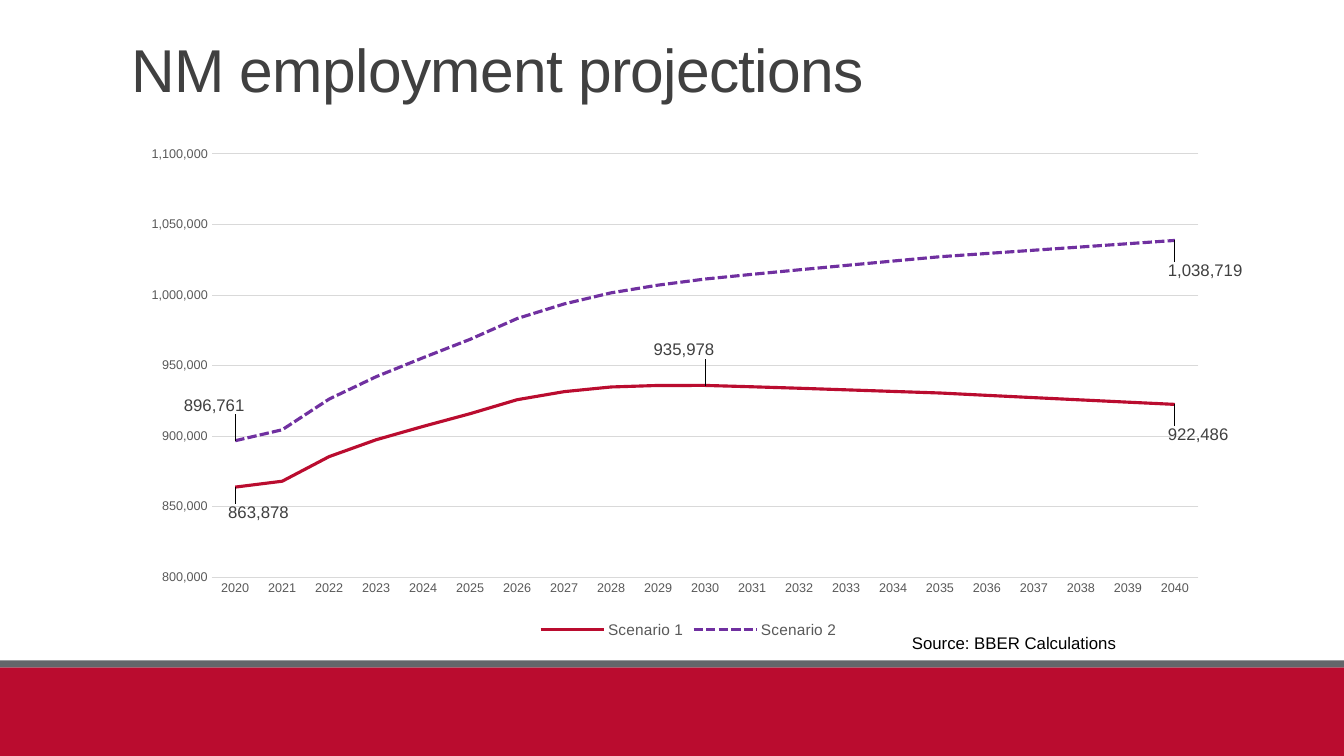
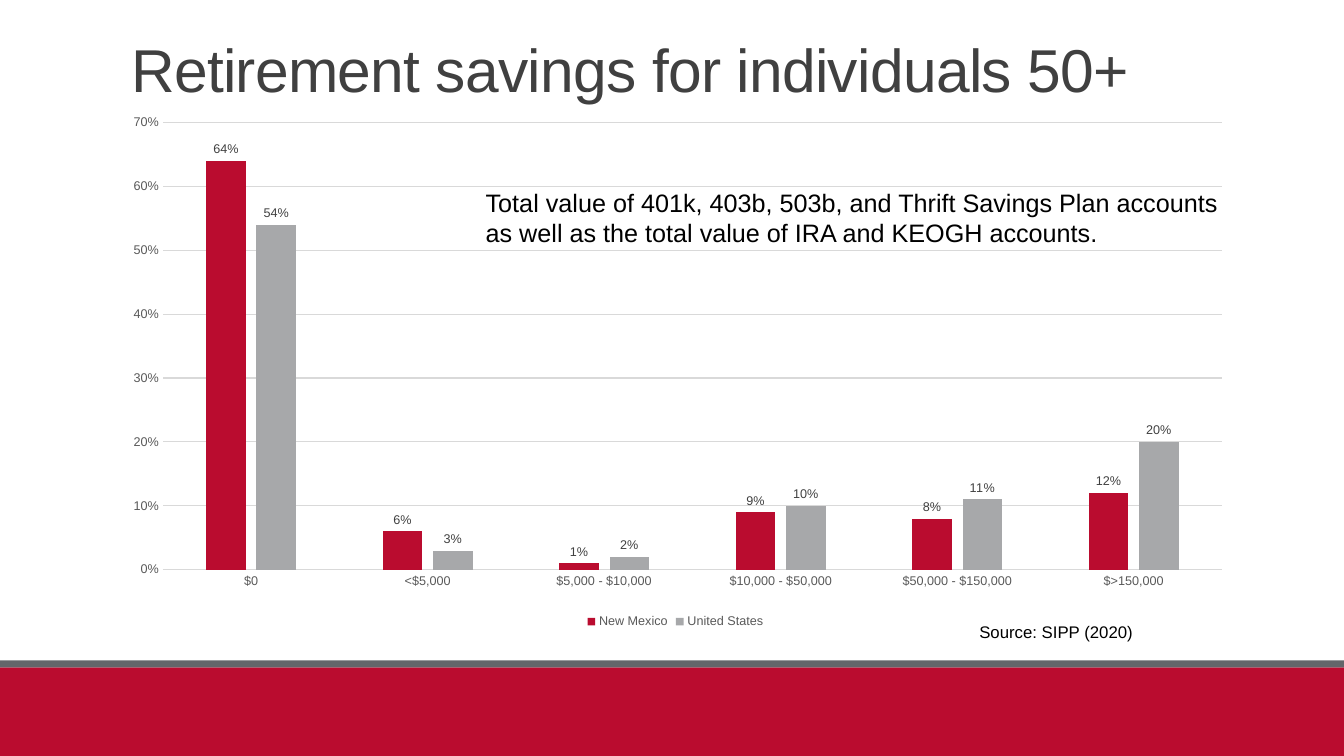
from dataclasses import dataclass
from typing import Any

import lxml.etree as etree
import pptx
import pptx.chart.data
import pptx.dml.color
import pptx.enum.chart
import pptx.enum.dml
import pptx.enum.shapes
import pptx.enum.text
import pptx.oxml
import pptx.oxml.ns
import pptx.util

Cm = pptx.util.Cm
Pt = pptx.util.Pt
qn = pptx.oxml.ns.qn
Kind = pptx.enum.chart.XL_CHART_TYPE
Fit = pptx.enum.text.MSO_AUTO_SIZE
C15 = "http://schemas.microsoft.com/office/drawing/2012/chart"
LEADERS = (
    f'<c:extLst {pptx.oxml.ns.nsdecls("c")}>'
    '<c:ext uri="{CE6537A1-D6FC-4f65-9D91-7224C49458BB}" '
    f'xmlns:c15="{C15}"><c15:showLeaderLines val="1"/></c:ext></c:extLst>'
)


@dataclass(frozen=True)
class Theme:
    font: str = "Arial"
    red: str = "BA0C2F"
    slate: str = "63666A"
    purple: str = "7030A0"
    silver: str = "A7A8AA"
    black: str = "000000"
    dark: str = "404040"
    gray: str = "595959"
    grid: str = "D9D9D9"
    title: float = 43.2
    note: float = 18
    source: float = 12
    label: float = 12
    legend: float = 11
    small: float = 9


THEME = Theme()


@dataclass(frozen=True)
class Box:
    """A place on the slide, in centimetres."""
    left: float
    top: float
    width: float
    height: float

    def size(self) -> tuple:
        return Cm(self.left), Cm(self.top), Cm(self.width), Cm(self.height)


@dataclass(frozen=True)
class Band:
    box: Box
    color: str


@dataclass(frozen=True)
class Note:
    text: str
    box: Box
    size: float


@dataclass(frozen=True)
class Tag:
    """A point label, moved by fractions of the chart's size."""
    point: int
    x: float
    y: float


@dataclass(frozen=True)
class Series:
    name: str
    color: str
    values: tuple
    tags: tuple = ()
    dashed: bool = False


@dataclass(frozen=True)
class Graph:
    kind: Any
    box: Box
    plot: tuple
    cats: tuple
    series: tuple
    format: str
    legend: float


@dataclass(frozen=True)
class Page:
    title: str
    graph: Graph
    notes: tuple


BANDS = (
    Band(Box(0, 16.82, 33.87, 2.23), THEME.red),
    Band(Box(0, 16.64, 33.87, 0.18), THEME.slate),
)
TITLE = Box(3.05, 1.7, 27.94, 1.07)

JOBS = Graph(
    Kind.LINE, Box(3.38, 3.5, 27.94, 12.7), (0.07, 0.03, 0.89, 0.84),
    tuple(str(year) for year in range(2020, 2041)),
    (
        Series("Scenario 1", THEME.red, (
            863878, 868059, 885517, 897444, 906923, 915925, 925807,
            931521, 934876, 935939, 935978, 935008, 933965, 932848,
            931705, 930557, 928916, 927286, 925670, 924070, 922486),
            (Tag(0, -0.01, 0.05), Tag(10, -0.05, -0.07),
             Tag(20, -0.01, 0.06))),
        Series("Scenario 2", THEME.purple, (
            896761, 904524, 926290, 942158, 955622, 968636, 983356,
            993716, 1001593, 1007028, 1011359, 1014672, 1017893, 1021020,
            1024107, 1027174, 1029477, 1031781, 1034089, 1036401, 1038719),
            (Tag(0, -0.05, -0.07), Tag(20, -0.01, 0.06)), True),
    ),
    "#,##0", THEME.legend,
)
SAVINGS = Graph(
    Kind.COLUMN_CLUSTERED, Box(2.67, 2.69, 28.7, 13.26),
    (0.05, 0.03, 0.93, 0.85),
    ("$0", "<$5,000", "$5,000 - $10,000", "$10,000 - $50,000",
     "$50,000 - $150,000", "$>150,000"),
    (
        Series("New Mexico", THEME.red, (0.64, 0.06, 0.01, 0.09, 0.08, 0.12)),
        Series("United States", THEME.silver,
               (0.54, 0.03, 0.02, 0.1, 0.11, 0.2)),
    ),
    "0%", THEME.small,
)
PAGES = (
    Page("NM employment projections", JOBS, (
        Note("Source: BBER Calculations", Box(22.73, 15.82, 11.13, 0.77),
             THEME.source),
    )),
    Page("Retirement savings for individuals 50+", SAVINGS, (
        Note("Source: SIPP (2020)", Box(24.43, 15.54, 8.69, 0.77),
             THEME.source),
        Note("Total value of 401k, 403b, 503b, and Thrift Savings Plan "
             "accounts as well as the total value of IRA and KEOGH accounts.",
             Box(11.99, 4.6, 19.15, 1.8), THEME.note),
    )),
)


def rgb(code: str) -> pptx.dml.color.RGBColor:
    return pptx.dml.color.RGBColor.from_string(code)


def style(font: Any, size: float, color: str) -> None:
    font.name = THEME.font
    font.size = Pt(size)
    font.bold = False
    font.color.rgb = rgb(color)


def place(shape: Any, box: Box) -> None:
    shape.left, shape.top, shape.width, shape.height = box.size()


def add_band(master: Any, slide: Any, band: Band, order: int) -> None:
    """Draw a band and move it to the master, behind the placeholders."""
    shape = slide.shapes.add_shape(
        pptx.enum.shapes.MSO_SHAPE.RECTANGLE, *band.box.size())
    shape.shadow.inherit = False
    shape.fill.solid()
    shape.fill.fore_color.rgb = rgb(band.color)
    shape.line.fill.background()
    master.shapes.element.insert(2 + order, shape.element)


def set_title(slide: Any, text: str) -> None:
    title = slide.shapes.title
    frame = title.text_frame
    frame.text = text
    frame.auto_size = Fit.NONE
    para = frame.paragraphs[0]
    para.alignment = pptx.enum.text.PP_ALIGN.LEFT
    para.line_spacing = 0.85
    style(para.runs[0].font, THEME.title, THEME.dark)
    title.element.xpath(".//a:rPr")[0].set("spc", "-50")


def add_note(slide: Any, note: Note) -> None:
    frame = slide.shapes.add_textbox(*note.box.size()).text_frame
    frame.word_wrap = True
    frame.auto_size = Fit.SHAPE_TO_FIT_TEXT
    frame.text = note.text
    style(frame.paragraphs[0].runs[0].font, note.size, THEME.black)


def layout(modes: dict) -> Any:
    """Build a manual chart layout from its settings."""
    root = etree.Element(qn("c:layout"))
    manual = etree.SubElement(root, qn("c:manualLayout"))
    for name, value in modes.items():
        etree.SubElement(manual, qn(f"c:{name}")).set("val", str(value))
    return root


def set_plot(chart: Any, plot: tuple) -> None:
    area = chart.element.xpath(".//c:plotArea")[0]
    for old in area.findall(qn("c:layout")):
        area.remove(old)
    x, y, w, h = plot
    area.insert(0, layout(dict(
        layoutTarget="inner", xMode="edge", yMode="edge", x=x, y=y, w=w, h=h)))


def style_axes(chart: Any, code: str) -> None:
    for axis in (chart.category_axis, chart.value_axis):
        axis.major_tick_mark = pptx.enum.chart.XL_TICK_MARK.NONE
        axis.minor_tick_mark = pptx.enum.chart.XL_TICK_MARK.NONE
        style(axis.tick_labels.font, THEME.small, THEME.gray)
    scale = chart.value_axis
    scale.format.line.fill.background()
    scale.has_major_gridlines = True
    scale.tick_labels.number_format = code
    scale.tick_labels.number_format_is_linked = False
    for line in (chart.category_axis.format.line,
                 scale.major_gridlines.format.line):
        line.color.rgb = rgb(THEME.grid)
        line.width = Pt(0.75)


def draw_line(chart: Any, plot: Any, order: int, series: Series) -> None:
    item = plot.series[order]
    item.smooth = False
    line = item.format.line
    line.color.rgb = rgb(series.color)
    line.width = Pt(2.25)
    if series.dashed:
        line.dash_style = pptx.enum.dml.MSO_LINE.SQUARE_DOT
    item.data_labels.show_value = False
    for tag in series.tags:
        label = item.points[tag.point].data_label
        style(label.font, THEME.label, THEME.dark)
        label.position = pptx.enum.chart.XL_LABEL_POSITION.RIGHT
    labels = chart.element.xpath(".//c:ser/c:dLbls")[order]
    for tag, node in zip(series.tags, labels.findall(qn("c:dLbl"))):
        node.insert(1, layout(dict(x=tag.x, y=tag.y)))
    labels.append(pptx.oxml.parse_xml(LEADERS))


def draw_bars(plot: Any, order: int, series: Series, code: str) -> None:
    item = plot.series[order]
    item.format.fill.solid()
    item.format.fill.fore_color.rgb = rgb(series.color)
    labels = item.data_labels
    labels.show_value = True
    labels.number_format = code
    labels.number_format_is_linked = False
    labels.position = pptx.enum.chart.XL_LABEL_POSITION.OUTSIDE_END
    style(labels.font, THEME.small, THEME.dark)


def add_graph(slide: Any, graph: Graph) -> None:
    data = pptx.chart.data.CategoryChartData(number_format=graph.format)
    data.categories = graph.cats
    for series in graph.series:
        data.add_series(series.name, series.values)
    chart = slide.shapes.add_chart(
        graph.kind, *graph.box.size(), data).chart
    style(chart.font, 10, THEME.black)
    chart.has_title = False
    chart.has_legend = True
    chart.legend.position = pptx.enum.chart.XL_LEGEND_POSITION.BOTTOM
    chart.legend.include_in_layout = False
    style(chart.legend.font, graph.legend, THEME.gray)
    style_axes(chart, graph.format)
    set_plot(chart, graph.plot)
    plot = chart.plots[0]
    plot.vary_by_categories = False
    scale = chart.value_axis
    if graph.kind == Kind.LINE:
        scale.minimum_scale, scale.maximum_scale = 800000, 1100000
        scale.major_unit = 50000
        for order, series in enumerate(graph.series):
            draw_line(chart, plot, order, series)
    else:
        scale.minimum_scale, scale.maximum_scale = 0, 0.7
        scale.major_unit = 0.1
        plot.gap_width, plot.overlap = 219, -27
        for order, series in enumerate(graph.series):
            draw_bars(plot, order, series, graph.format)


def main() -> None:
    deck = pptx.Presentation()
    deck.slide_width, deck.slide_height = Cm(33.87), Cm(19.05)
    base = deck.slide_layouts[5]
    head = base.placeholders[0]
    place(head, TITLE)
    head.text_frame.vertical_anchor = pptx.enum.text.MSO_ANCHOR.BOTTOM
    for page in PAGES:
        slide = deck.slides.add_slide(base)
        set_title(slide, page.title)
        add_graph(slide, page.graph)
        for note in page.notes:
            add_note(slide, note)
    for order, band in enumerate(BANDS):
        add_band(deck.slide_master, deck.slides[0], band, order)
    deck.save("out.pptx")


if __name__ == "__main__":
    main()
